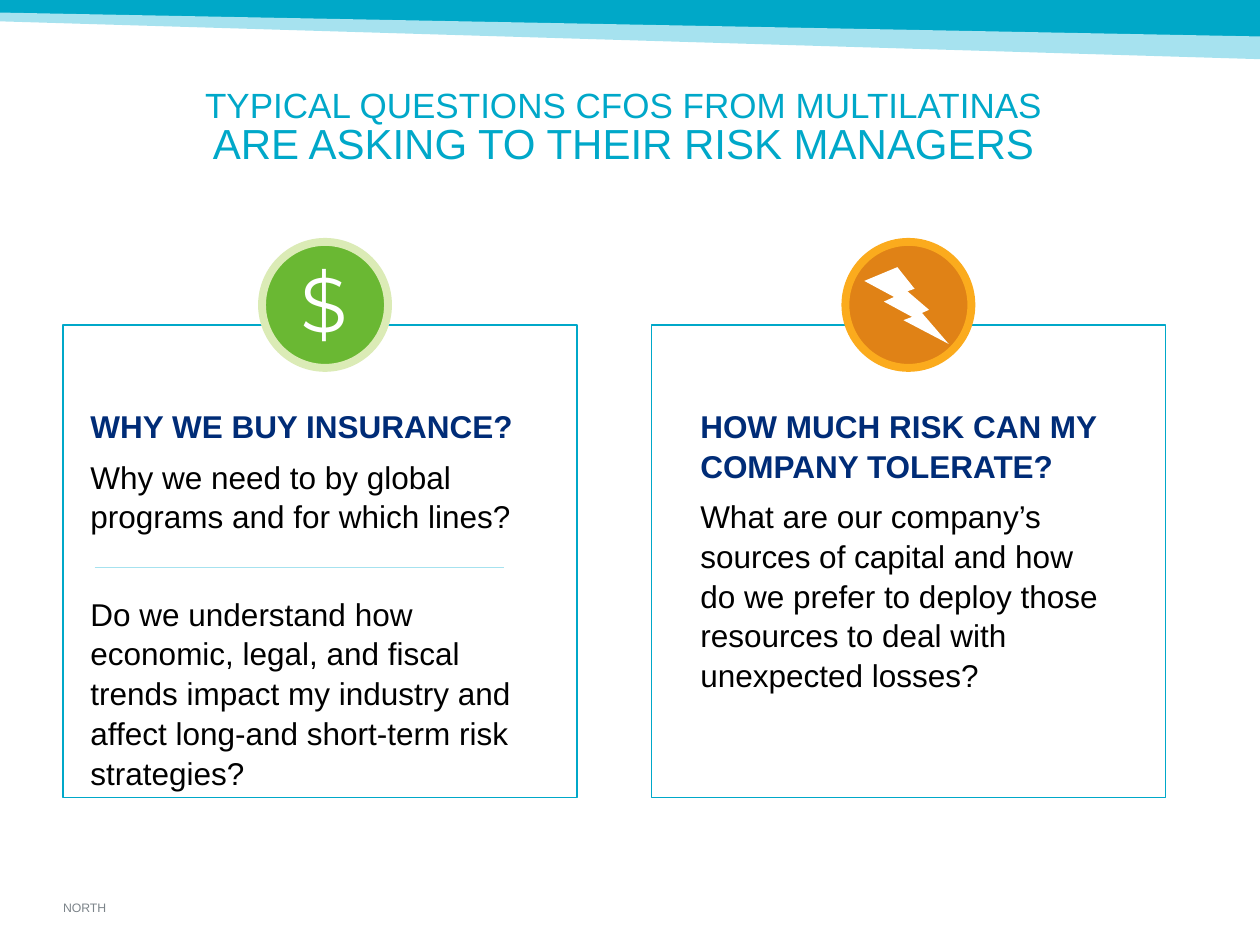
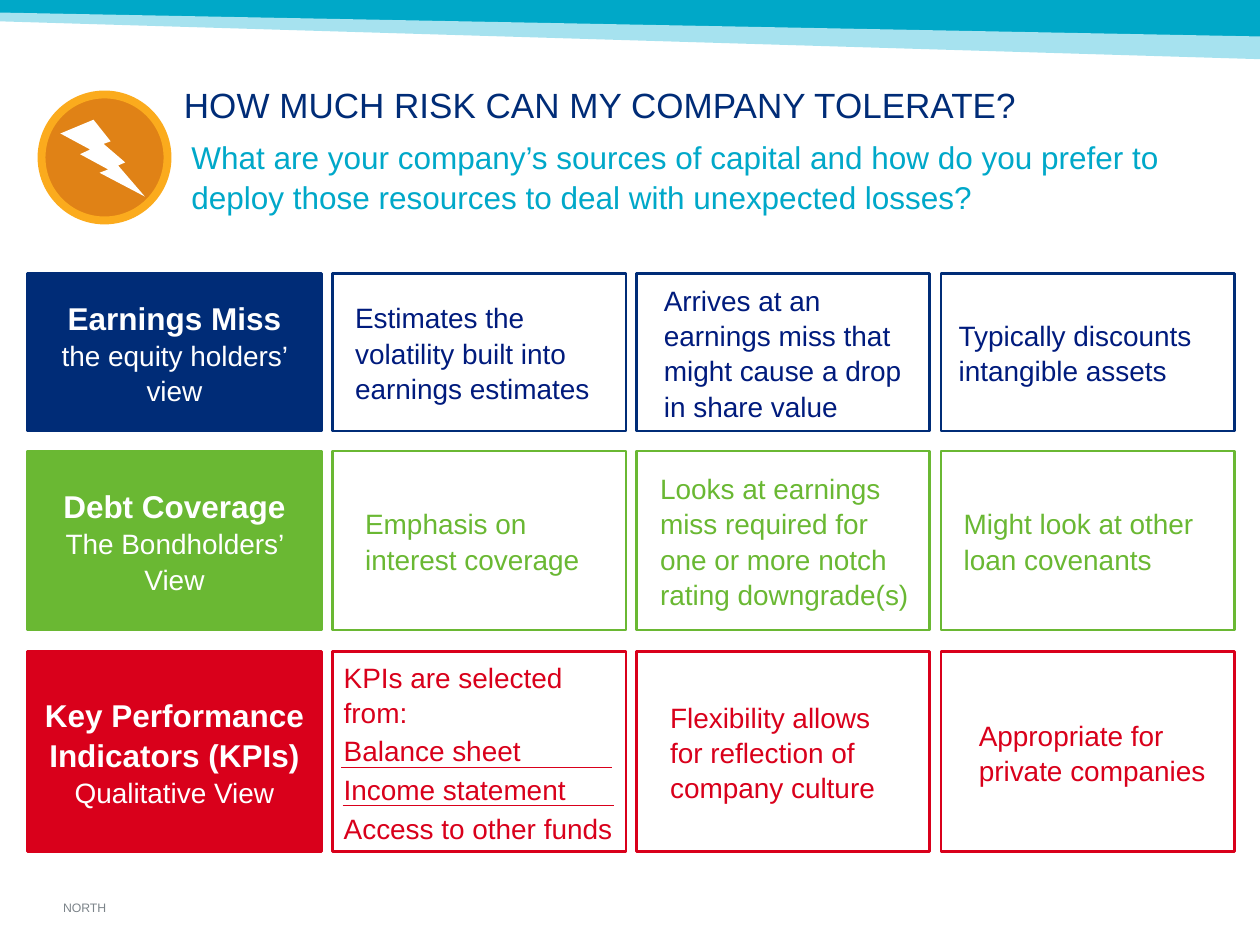
"""Build two slides on risk questions and risk tolerance views."""
from collections import namedtuple

from lxml import etree
from pptx import Presentation
from pptx.dml.color import RGBColor
from pptx.enum.shapes import MSO_CONNECTOR, MSO_SHAPE
from pptx.enum.text import MSO_ANCHOR, MSO_AUTO_SIZE, PP_ALIGN
from pptx.oxml.ns import qn
from pptx.util import Pt

PX = 9144
RECTANGLE, OVAL, BOLT = MSO_SHAPE.RECTANGLE, MSO_SHAPE.OVAL, MSO_SHAPE.LIGHTNING_BOLT
STRAIGHT = MSO_CONNECTOR.STRAIGHT
TOP, MIDDLE, BOTTOM = MSO_ANCHOR.TOP, MSO_ANCHOR.MIDDLE, MSO_ANCHOR.BOTTOM
LEFT, CENTER = PP_ALIGN.LEFT, PP_ALIGN.CENTER
NO_AUTOFIT = MSO_AUTO_SIZE.NONE

TEAL, TEAL_BAND, SKY = "00A8C9", "00A8C8", "A6E2EF"
NAVY, NAVY_TEXT, GREEN, RED = "002C77", "001B7D", "6AB833", "D9001B"
ORANGE, AMBER, LIME = "E08216", "FBAB1D", "DBEBB6"
WHITE, BLACK, GRAY = "FFFFFF", "000000", "7C848A"

Para = namedtuple("Para", "text size color bold before spacing font",
                  defaults=(18, BLACK, False, 0, 1.05, "Arial"))


def rgb(value):
    return RGBColor.from_string(value)


class SlideBuilder:
    """Hold the shared style and the current slide."""

    def __init__(self):
        self.deck = Presentation()
        self.deck.slide_width, self.deck.slide_height = 1000 * PX, 750 * PX
        self.page = None

    def start_page(self, title, left, width, height, align=LEFT):
        self.page = self.deck.slides.add_slide(self.deck.slide_layouts[5])
        self.text([Para("NORTH", 7, GRAY, spacing=1)], 50, 715, 301, 11,
                  anchor=BOTTOM, insets=(0, 0, 0, 0), wrap=False)
        self.band([(0, 0), (1000, 0), (1000, 32), (0, 13)], TEAL_BAND)
        self.band([(0, 10), (1000, 29), (1000, 47), (0, 17)], SKY)
        box = self.page.shapes.title
        box.left, box.top, box.width, box.height = (
            value * PX for value in (left, 67, width, height))
        self.fill_text(box, title, align, TOP, (0, 5, 10, 5))

    def band(self, points, color):
        builder = self.page.shapes.build_freeform(*points[0], scale=PX)
        builder.add_line_segments(points[1:])
        self.paint(builder.convert_to_shape(), color)

    def paint(self, shape, fill=None, line=None, weight=1.5):
        shape.shadow.inherit = False
        if fill:
            shape.fill.solid()
            shape.fill.fore_color.rgb = rgb(fill)
        else:
            shape.fill.background()
        if line:
            shape.line.color.rgb = rgb(line)
            shape.line.width = Pt(weight)
        else:
            shape.line.fill.background()

    def shape(self, kind, left, top, width, height, **style):
        shape = self.page.shapes.add_shape(
            kind, left * PX, top * PX, width * PX, height * PX)
        self.paint(shape, **style)
        return shape

    def fill_text(self, box, paras, align=LEFT, anchor=TOP,
                  insets=(10, 5, 10, 5), wrap=True):
        frame = box.text_frame
        frame.auto_size = NO_AUTOFIT
        frame.word_wrap = wrap
        frame.vertical_anchor = anchor
        (frame.margin_left, frame.margin_top,
         frame.margin_right, frame.margin_bottom) = (value * PX for value in insets)
        for index, para in enumerate(paras):
            paragraph = frame.add_paragraph() if index else frame.paragraphs[0]
            paragraph.text = para.text
            paragraph.alignment = align
            paragraph.line_spacing = para.spacing
            paragraph.space_before = Pt(para.before)
            font = paragraph.font
            font.name, font.size, font.bold = para.font, Pt(para.size), para.bold
            font.color.rgb = rgb(para.color)

    def text(self, paras, left, top, width, height, **style):
        box = self.page.shapes.add_textbox(
            left * PX, top * PX, width * PX, height * PX)
        self.fill_text(box, paras, **style)

    def rule(self, left, top, width, color):
        line = self.page.shapes.add_connector(
            STRAIGHT, left * PX, top * PX, (left + width) * PX, top * PX)
        line.line.color.rgb = rgb(color)
        line.line.width = Pt(0.25)
        etree.SubElement(line._element.spPr, qn("a:effectLst"))

    def badge(self, left, top, fill, ring):
        self.shape(OVAL, left, top, 100, 100, fill=fill, line=ring, weight=4.5)

    def bolt_badge(self, left, top):
        self.badge(left, top, ORANGE, AMBER)
        self.shape(BOLT, left + 15, top + 20, 67, 61, fill=WHITE)

    def question_card(self, left, text_left, text_width, paras):
        self.text(paras, text_left, 317, text_width, 347)
        self.shape(RECTANGLE, left, 258, 408, 375, line=TEAL, weight=0.75)

    def view_row(self, top, height, color, label, cells, text_color):
        for column in range(4):
            left = 22 + round(column * 725 / 3)
            cell = self.shape(RECTANGLE, left, top, 233, height,
                              fill=None if column else color, line=color)
            if not column:
                heading, view = label
                self.fill_text(cell, [Para(heading, 18, WHITE, True),
                                      Para(view, 16, WHITE)],
                               CENTER, MIDDLE, (10, 10, 10, 10))
        for left, width, first, *items in cells:
            paras = [Para(first, 16, text_color)]
            paras += [Para(item, 16, text_color, before=1, spacing=1.1)
                      for item in items]
            self.text(paras, left, top, width, height, anchor=MIDDLE)


def add_questions(slides):
    slides.start_page(
        [Para("TYPICAL QUESTIONS CFOS FROM MULTILATINAS", 20, TEAL, spacing=0.83),
         Para("ARE ASKING TO THEIR RISK MANAGERS", 24, TEAL, spacing=0.83)],
        125, 750, 85, CENTER)
    slides.question_card(517, 546, 350, [
        Para("HOW MUCH RISK CAN MY COMPANY TOLERATE?", color=NAVY, bold=True),
        Para("What are our company’s sources of capital and how do we prefer "
             "to deploy those resources to deal with unexpected losses?", before=6)])
    slides.bolt_badge(671, 192)
    slides.question_card(50, 62, 383, [
        Para("WHY WE BUY INSURANCE?", color=NAVY, bold=True),
        Para("Why we need to by global programs and for which lines?", before=6),
        Para("Do we understand how economic, legal, and fiscal trends impact my "
             "industry and affect long-and short-term risk strategies?", before=33)])
    slides.badge(208, 192, GREEN, LIME)
    slides.text([Para("$", 44, WHITE, font="Montserrat")], 229, 194, 61, 84, wrap=False)
    slides.rule(75, 450, 325, SKY)


def add_tolerance(slides):
    slides.start_page(
        [Para("HOW MUCH RISK CAN MY COMPANY TOLERATE?", 20, NAVY, spacing=0.83)],
        146, 840, 42)
    slides.bolt_badge(33, 75)
    slides.text(
        [Para("What are your company’s sources of capital and how do you prefer "
              "to deploy those resources to deal with unexpected losses?", color=TEAL)],
        142, 103, 825, 71)
    slides.view_row(217, 125, NAVY, ("Earnings Miss", "the equity holders’ view"), [
        (272, 208, "Estimates the volatility built into earnings estimates"),
        (517, 225, "Arrives at an earnings miss that might cause a drop in share value"),
        (751, 225, "Typically discounts intangible assets")], NAVY_TEXT)
    slides.view_row(358, 142, GREEN, ("Debt Coverage", "The Bondholders’ View"), [
        (280, 200, "Emphasis on interest coverage"),
        (514, 225, "Looks at earnings miss required for one or more notch "
                   "rating downgrade(s)"),
        (755, 225, "Might look at other loan covenants")], GREEN)
    slides.view_row(517, 159, RED,
                    ("Key Performance Indicators (KPIs)", "Qualitative View"), [
        (263, 250, "KPIs are selected from:", "Balance sheet",
         "Income statement", "Access to other funds"),
        (522, 200, "Flexibility allows for reflection of company culture"),
        (767, 217, "Appropriate for private companies")], RED)
    slides.rule(271, 609, 215, RED)
    slides.rule(272, 639, 215, RED)


def main():
    slides = SlideBuilder()
    add_questions(slides)
    add_tolerance(slides)
    slides.deck.save("out.pptx")


if __name__ == "__main__":
    main()
